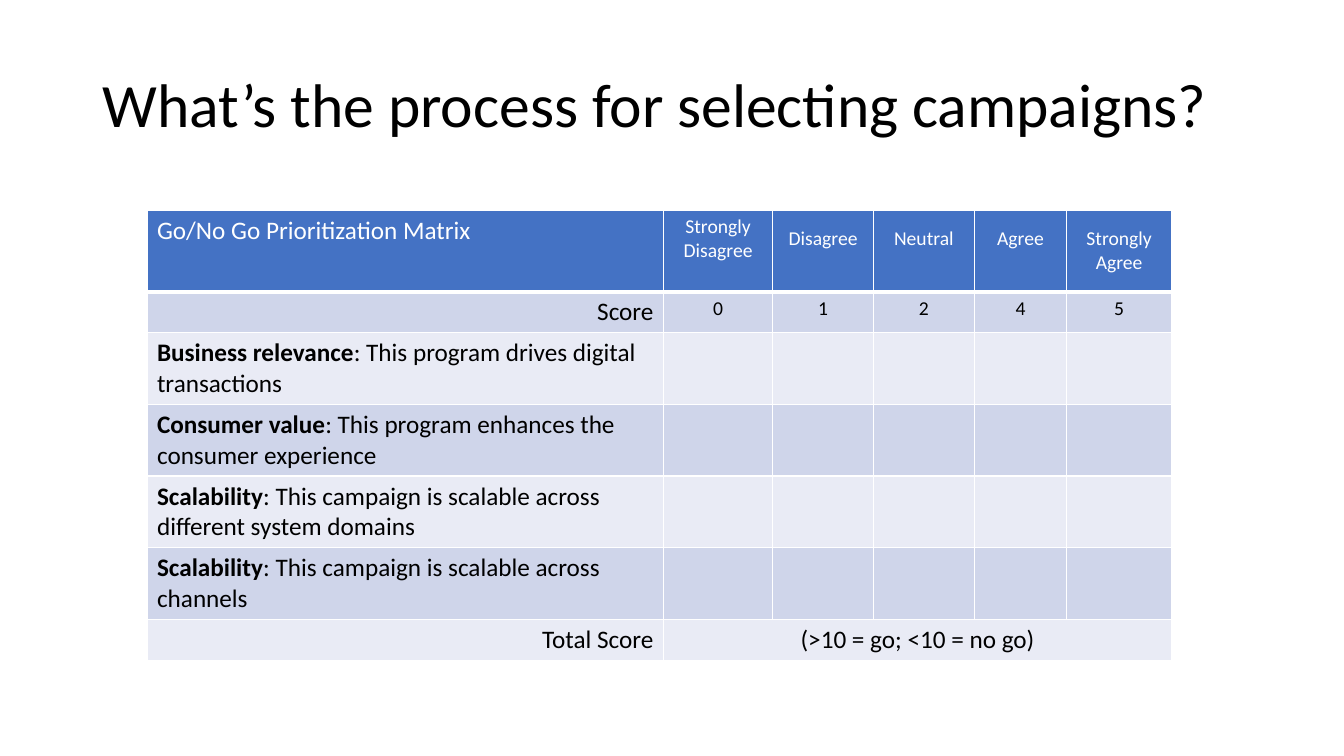
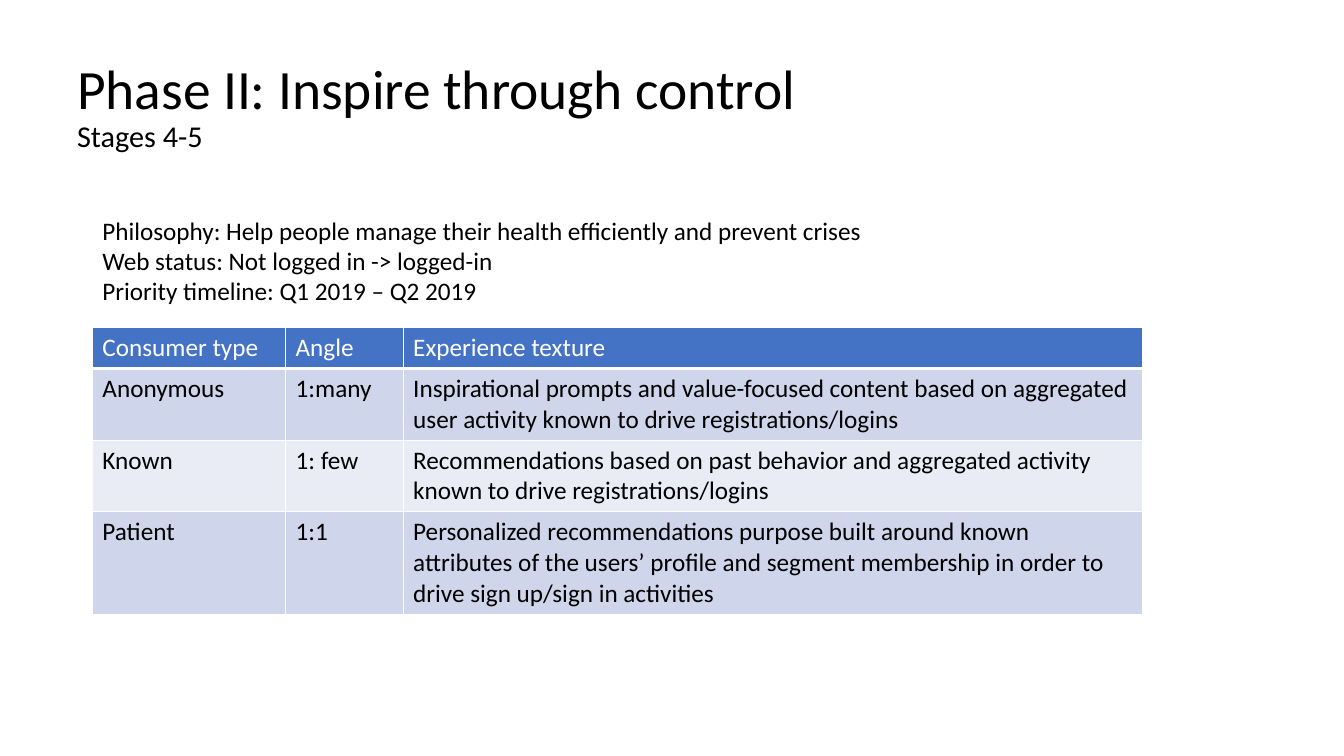
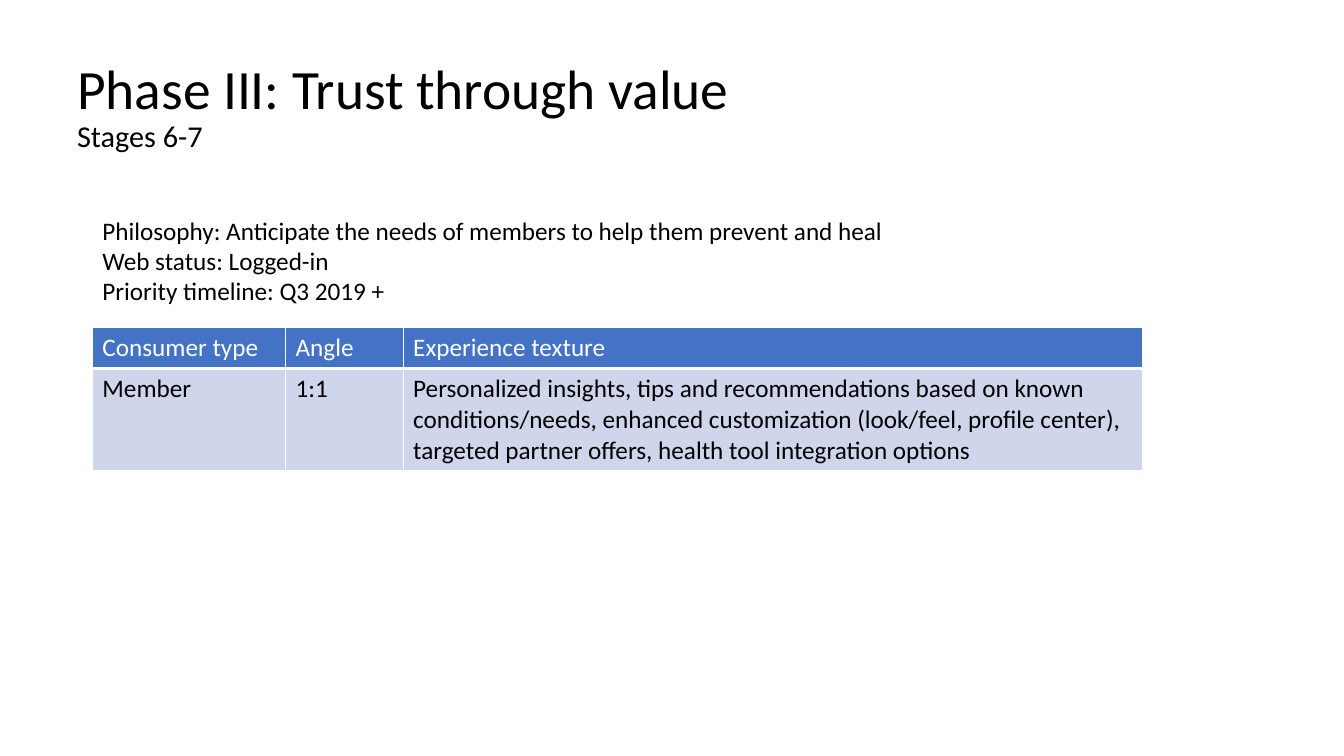
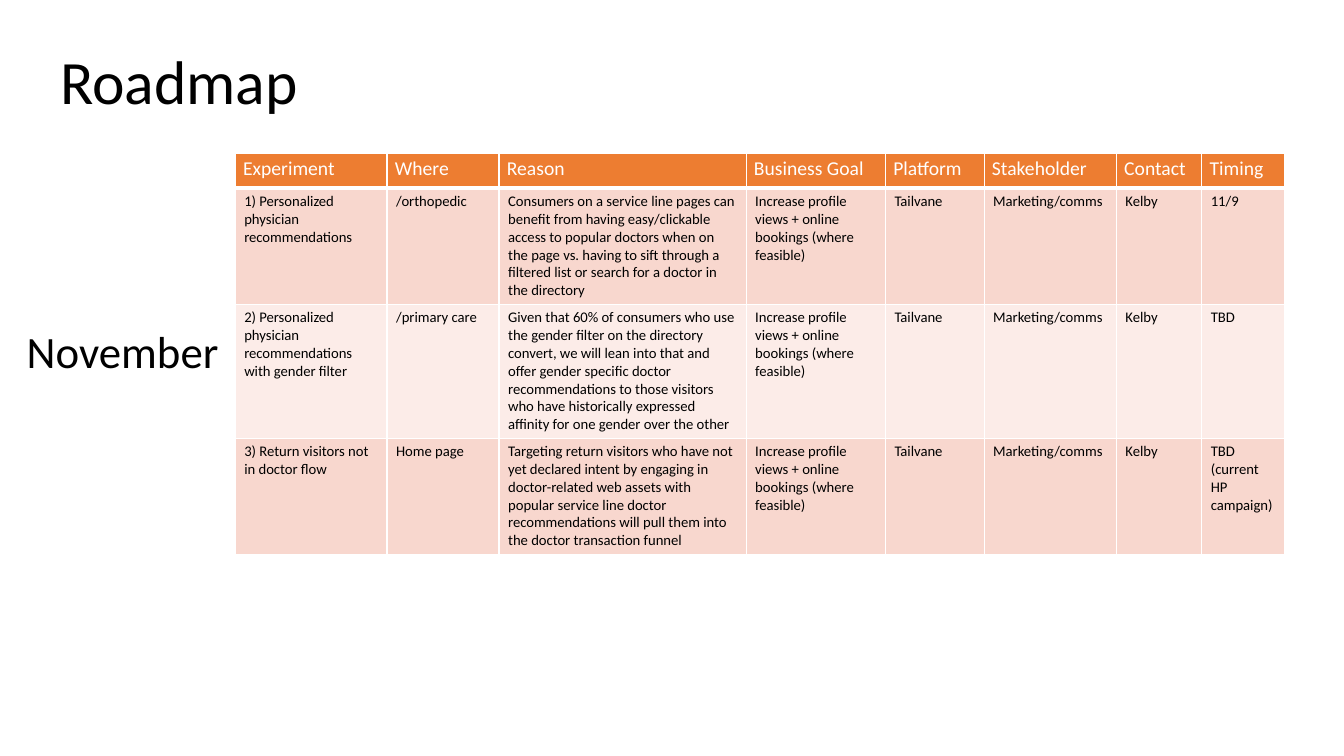
"""Build four campaign planning slides with titles, notes and tables."""
import dataclasses
import typing

import lxml.etree
import pptx
import pptx.dml.color
import pptx.enum.text
import pptx.oxml.ns
import pptx.slide
import pptx.table
import pptx.text.text
import pptx.util

Pt = pptx.util.Pt
ALIGN = pptx.enum.text.PP_ALIGN
ANCHOR = pptx.enum.text.MSO_ANCHOR


@dataclasses.dataclass(frozen=True)
class Palette:
    header: str
    odd_row: str
    even_row: str


@dataclasses.dataclass(frozen=True)
class Theme:
    font: str = "Calibri"
    ink: str = "000000"
    paper: str = "FFFFFF"
    blue: Palette = Palette("4472C4", "CFD5EA", "E9EBF5")
    orange: Palette = Palette("ED7D31", "F8D7CE", "FCECE8")
    title: float = 44
    phase: float = 39.6
    month: float = 32
    stage: float = 21.6
    body: float = 18
    label: float = 14
    small: float = 10.5
    rule: float = 1
    header_rule: float = 3
    title_height: float = 70


THEME = Theme()


@dataclasses.dataclass(frozen=True)
class Box:
    left: float
    top: float
    width: float
    height: float


@dataclasses.dataclass(frozen=True)
class Cell:
    text: str = ""
    lead: str = ""
    size: float = THEME.body
    align: ALIGN = ALIGN.LEFT
    anchor: ANCHOR = ANCHOR.TOP
    inset_x: float = 7.2
    inset_y: float = 3.6
    extra_bottom: float = 0
    span: int = 1


@dataclasses.dataclass(frozen=True)
class Grid:
    left: float
    top: float
    columns: tuple[float, ...]
    heights: tuple[float, ...]
    rows: list[list[Cell]]
    palette: Palette = THEME.blue


@dataclasses.dataclass(frozen=True)
class Phase:
    title: str
    stages: str
    notes: tuple[str, ...]
    heights: tuple[float, ...]
    rows: tuple[tuple[str, str, str], ...]


@dataclasses.dataclass(frozen=True)
class Experiment:
    name: str
    where: str
    reason: str
    timing: str


PHASES = (
    Phase(
        "Phase II: Inspire through control",
        "Stages 4-5",
        (
            "Philosophy: Help people manage their health efficiently and prevent crises",
            "Web status: Not logged in -> logged-in",
            "Priority timeline: Q1 2019 – Q2 2019",
        ),
        (29.2, 51.2, 51.2, 73.2),
        (
            ("Anonymous", "1:many", "Inspirational prompts and value-focused content based on "
             "aggregated user activity known to drive registrations/logins"),
            ("Known", "1: few", "Recommendations based on past behavior and aggregated activity "
             "known to drive registrations/logins"),
            ("Patient", "1:1", "Personalized recommendations purpose built around known "
             "attributes of the users’ profile and segment membership in order to "
             "drive sign up/sign in activities"),
        ),
    ),
    Phase(
        "Phase III: Trust through value",
        "Stages 6-7",
        (
            "Philosophy: Anticipate the needs of members to help them prevent and heal",
            "Web status: Logged-in",
            "Priority timeline: Q3 2019 +",
        ),
        (29.2, 73.2),
        (
            ("Member", "1:1", "Personalized insights, tips and recommendations based on known "
             "conditions/needs, enhanced customization (look/feel, profile center), "
             "targeted partner offers, health tool integration options"),
        ),
    ),
)

EXPERIMENTS = (
    Experiment(
        "1) Personalized physician recommendations",
        "/orthopedic",
        "Consumers on a service line pages can benefit from having easy/clickable access to "
        "popular doctors when on the page vs. having to sift through a filtered list or search "
        "for a doctor in the directory",
        "11/9",
    ),
    Experiment(
        "2) Personalized physician recommendations with gender filter",
        "/primary care",
        "Given that 60% of consumers who use the gender filter on the directory convert, we will "
        "lean into that and offer gender specific doctor recommendations to those visitors who "
        "have historically expressed affinity for one gender over the other",
        "TBD",
    ),
    Experiment(
        "3) Return visitors not in doctor flow",
        "Home page",
        "Targeting return visitors who have not yet declared intent by engaging in "
        "doctor-related web assets with popular service line doctor recommendations will pull "
        "them into the doctor transaction funnel",
        "TBD (current HP campaign)",
    ),
)


def color(value: str) -> pptx.dml.color.RGBColor:
    return pptx.dml.color.RGBColor.from_string(value)


def style_paragraph(paragraph: pptx.text.text._Paragraph, size: float, ink: str = THEME.ink) -> None:
    paragraph.font.name = THEME.font
    paragraph.font.size = Pt(size)
    paragraph.font.bold = False
    paragraph.font.color.rgb = color(ink)


def add_text(slide: pptx.slide.Slide, box: Box, lines: typing.Sequence[str],
             size: float) -> pptx.text.text.TextFrame:
    shape = slide.shapes.add_textbox(Pt(box.left), Pt(box.top), Pt(box.width), Pt(box.height))
    frame = shape.text_frame
    frame.word_wrap = True
    for index, line in enumerate(lines):
        paragraph = frame.add_paragraph() if index else frame.paragraphs[0]
        paragraph.text = line
        style_paragraph(paragraph, size)
    return frame


def add_title(slide: pptx.slide.Slide, box: Box, text: str, size: float, subtitle: str = "") -> None:
    frame = add_text(slide, box, [text], size)
    frame.vertical_anchor = ANCHOR.MIDDLE
    paragraph = frame.paragraphs[0]
    paragraph.line_spacing = 0.9
    if subtitle:
        paragraph.add_line_break()
        run = paragraph.add_run()
        run.text = subtitle
        run.font.size = Pt(THEME.stage)


def set_borders(cell: pptx.table._Cell, bottom: float) -> None:
    properties = cell._tc.get_or_add_tcPr()
    qn = pptx.oxml.ns.qn
    widths = {"lnL": THEME.rule, "lnR": THEME.rule, "lnT": THEME.rule, "lnB": bottom}
    for index, (side, width) in enumerate(widths.items()):
        line = lxml.etree.Element(qn(f"a:{side}"), w=str(int(Pt(width))))
        fill = lxml.etree.SubElement(line, qn("a:solidFill"))
        lxml.etree.SubElement(fill, qn("a:srgbClr"), val=THEME.paper)
        properties.insert(index, line)


def fill_cell(target: pptx.table._Cell, cell: Cell, fill: str, is_header: bool) -> None:
    target.fill.solid()
    target.fill.fore_color.rgb = color(fill)
    set_borders(target, THEME.header_rule if is_header else THEME.rule)
    target.margin_left = target.margin_right = Pt(cell.inset_x)
    target.margin_top = Pt(cell.inset_y)
    target.margin_bottom = Pt(cell.inset_y + cell.extra_bottom)
    target.vertical_anchor = cell.anchor
    paragraph = target.text_frame.paragraphs[0]
    paragraph.alignment = cell.align
    style_paragraph(paragraph, cell.size, THEME.paper if is_header else THEME.ink)
    for text, bold in ((cell.lead, True), (cell.text, None)):
        if text:
            run = paragraph.add_run()
            run.text = text
            run.font.bold = bold


def add_grid(slide: pptx.slide.Slide, grid: Grid) -> None:
    table = slide.shapes.add_table(
        len(grid.rows), len(grid.columns), Pt(grid.left), Pt(grid.top),
        Pt(sum(grid.columns)), Pt(sum(grid.heights))).table
    for column, width in zip(table.columns, grid.columns):
        column.width = Pt(width)
    for row, height in zip(table.rows, grid.heights):
        row.height = Pt(height)
    palette = grid.palette
    for row_index, cells in enumerate(grid.rows):
        is_header = row_index == 0
        band = palette.odd_row if row_index % 2 else palette.even_row
        for column_index, cell in enumerate(cells):
            target = table.cell(row_index, column_index)
            if cell.span > 1:
                target.merge(table.cell(row_index, column_index + cell.span - 1))
            fill_cell(target, cell, palette.header if is_header else band, is_header)


def build_matrix(slide: pptx.slide.Slide) -> None:
    add_title(slide, Box(66, 42, 882, THEME.title_height),
              "What’s the process for selecting campaigns?", THEME.title)
    ratings = (("Strongly Disagree", "0", 17), ("Disagree", "1", 17), ("Neutral", "2", 17),
               ("Agree", "4", 17), ("Strongly Agree", "5", 0))
    criteria = (
        ("Business relevance", "This program drives digital transactions"),
        ("Consumer value", "This program enhances the consumer experience"),
        ("Scalability", "This campaign is scalable across different system domains"),
        ("Scalability", "This campaign is scalable across channels"),
    )
    header = [Cell("Go/No Go Prioritization Matrix")] + [
        Cell(name, size=THEME.label, align=ALIGN.CENTER, anchor=ANCHOR.MIDDLE, extra_bottom=extra)
        for name, _, extra in ratings]
    scores = [Cell("Score", align=ALIGN.RIGHT)] + [
        Cell(score, size=THEME.label, align=ALIGN.CENTER) for _, score, _ in ratings]
    body = [[Cell(f": {text}", lead=lead)] + [Cell()] * len(ratings) for lead, text in criteria]
    total = [Cell("Total Score", align=ALIGN.RIGHT),
             Cell("(>10 = go; <10 = no go)", align=ALIGN.CENTER, span=len(ratings))]
    add_grid(slide, Grid(105, 150, (369, 78, 72, 72, 66, 75),
                         (58.4, 29.2, *[51.2] * len(criteria), 29.2),
                         [header, scores, *body, total]))


def build_phase(slide: pptx.slide.Slide, phase: Phase) -> None:
    add_title(slide, Box(48, 42, 864, THEME.title_height), phase.title, THEME.phase, phase.stages)
    header = ("Consumer type", "Angle", "Experience texture")
    rows = [[Cell(text) for text in row] for row in (header, *phase.rows)]
    add_grid(slide, Grid(66, 234, (138, 84, 528), phase.heights, rows))
    add_text(slide, Box(66, 150, 600, 73), phase.notes, THEME.body)


def build_roadmap(slide: pptx.slide.Slide) -> None:
    add_title(slide, Box(12, 217.5, 156, THEME.title_height), "November", THEME.month)
    names = ("Experiment", "Where", "Reason", "Business Goal", "Platform", "Stakeholder",
             "Contact", "Timing")
    header = [Cell(name, size=THEME.label, inset_x=5.6, inset_y=2.8) for name in names]
    body = [
        [Cell(text, size=THEME.small, inset_x=6.5, inset_y=3.2) for text in (
            item.name, item.where, item.reason,
            "Increase profile views + online bookings (where feasible)",
            "Tailvane", "Marketing/comms", "Kelby", item.timing)]
        for item in EXPERIMENTS]
    add_grid(slide, Grid(168, 109.5, (108.5, 80, 176.5, 99.5, 70.5, 94.5, 61, 59.5),
                         (25, 83, 95.6, 83), [header, *body], THEME.orange))
    add_text(slide, Box(36, 27, 864, THEME.title_height), ["Roadmap"], THEME.title)


def main() -> None:
    presentation = pptx.Presentation()
    presentation.slide_width = Pt(960)
    presentation.slide_height = Pt(540)
    blank = presentation.slide_layouts[6]
    build_matrix(presentation.slides.add_slide(blank))
    for phase in PHASES:
        build_phase(presentation.slides.add_slide(blank), phase)
    build_roadmap(presentation.slides.add_slide(blank))
    presentation.save("out.pptx")


if __name__ == "__main__":
    main()
